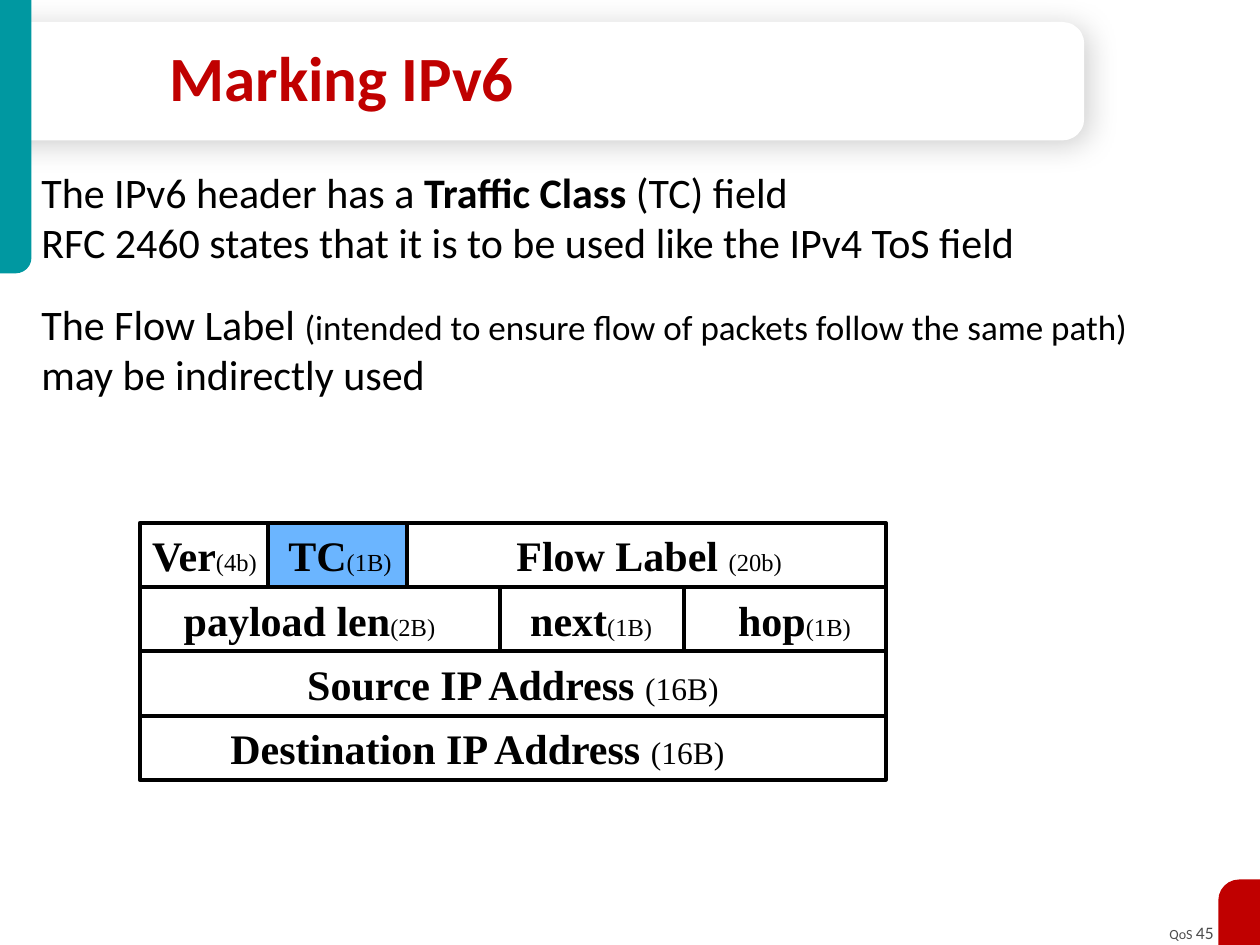
from lxml import etree
from pptx import Presentation
from pptx.dml.color import RGBColor
from pptx.enum.shapes import MSO_CONNECTOR, MSO_SHAPE
from pptx.enum.text import MSO_ANCHOR, PP_ALIGN
from pptx.oxml.ns import qn
from pptx.util import Inches, Pt

RECT = MSO_SHAPE.RECTANGLE
ONE_ROUND = MSO_SHAPE.ROUND_1_RECTANGLE
TWO_ROUND = MSO_SHAPE.ROUND_2_SAME_RECTANGLE
STRAIGHT = MSO_CONNECTOR.STRAIGHT
LEFT, RIGHT = PP_ALIGN.LEFT, PP_ALIGN.RIGHT
TOP, MIDDLE = MSO_ANCHOR.TOP, MSO_ANCHOR.MIDDLE
BODY_FONT, HEADER_FONT = "Calibri", "Times New Roman"

COLORS = {"paper": "FFFFFF", "teal": "0098A1", "red": "C00000",
          "ink": "000000", "gray": "4D4D4D", "highlight": "6BB5FF"}

TITLE = [[("Marking IPv6", 36, True)]]
FOOTER = [[("QoS ", 8, False), ("45", 10, False)]]
BODY = [
    [("The IPv6 header has a ", 24, False), ("Traffic Class", 24, True),
     (" (TC) field", 24, False)],
    [("RFC 2460 states that it is to be used like the IPv4 ToS field", 24, False)],
    [("The Flow Label ", 24, False),
     ("(intended to ensure flow of packets follow the same path)", 20, False),
     ("\vmay be indirectly used", 24, False)],
]

# Each field: name, size note, note point size, text offset within the row
HEADER_ROWS = [
    {"fields": [("Ver", "(4b)", 14, 0), ("TC", "(1B)", 14, 1.08),
                ("Flow Label ", "(20b)", 14, 2.89)], "dividers": [2.13, 3.23]},
    {"fields": [("payload len", "(2B)", 14, 0.25), ("next", "(1B)", 14, 3.0),
                ("hop", "(1B)", 14, 4.65)], "dividers": [3.97, 5.43]},
    {"fields": [("Source IP Address ", "(16B)", 18, 1.23)], "dividers": []},
    {"fields": [("Destination IP Address ", "(16B)", 18, 0.62)], "dividers": []},
]
ROW_LEFT, ROW_TOP, ROW_WIDTH, ROW_HEIGHT = 1.11, 4.15, 5.92, 0.51


def rgb(name):
    return RGBColor.from_string(COLORS[name])


def write(box, paragraphs, font=BODY_FONT, color="ink", align=LEFT, anchor=TOP,
          wrap=True, line_spacing=None, space_before=()):
    frame = box.text_frame
    frame.word_wrap = wrap
    frame.vertical_anchor = anchor
    for index, spans in enumerate(paragraphs):
        para = frame.paragraphs[0] if index == 0 else frame.add_paragraph()
        para.alignment = align
        para.line_spacing = line_spacing
        if index in space_before:
            para.space_before = Pt(18)
        for text, size, bold in spans:
            if text.startswith("\v"):
                para.add_line_break()
            span = para.add_run()
            span.text = text.lstrip("\v")
            span.font.name = font
            span.font.size = Pt(size)
            span.font.bold = bold
            span.font.color.rgb = rgb(color)


def add_text(page, area, paragraphs, **style):
    box = page.shapes.add_textbox(*map(Inches, area))
    write(box, paragraphs, **style)


def add_block(page, kind, area, fill=None, line=None, adjustments=(), flip=None):
    block = page.shapes.add_shape(kind, *map(Inches, area))
    block.shadow.inherit = False
    if fill:
        block.fill.solid()
        block.fill.fore_color.rgb = rgb(fill)
    else:
        block.fill.background()
    if line:
        block.line.color.rgb = rgb("ink")
        block.line.width = Pt(line)
    else:
        block.line.fill.background()
    for index, value in enumerate(adjustments):
        block.adjustments[index] = value
    if flip:
        block.element.spPr.find(qn("a:xfrm")).set(flip, "1")
    return block


def add_soft_shadow(block):
    effects = block.element.spPr.find(qn("a:effectLst"))
    shadow = etree.SubElement(effects, qn("a:outerShdw"), blurRad=str(Pt(17)),
                              dist=str(Pt(3)), dir=str(45 * 60000), rotWithShape="0")
    color = etree.SubElement(shadow, qn("a:srgbClr"), val=COLORS["ink"])
    etree.SubElement(color, qn("a:alpha"), val="19000")


def add_divider(page, x, top):
    divider = page.shapes.add_connector(STRAIGHT, Inches(x), Inches(top),
                                        Inches(x), Inches(top + ROW_HEIGHT))
    divider.line.color.rgb = rgb("ink")
    divider.line.width = Pt(2.25)
    etree.SubElement(divider.element.spPr, qn("a:effectLst"))


def add_header_row(page, top, fields, dividers):
    row = add_block(page, RECT, (ROW_LEFT, top, ROW_WIDTH, ROW_HEIGHT), line=2.25)
    spans, stops = [], []
    for name, note, note_size, offset in fields:
        if offset:
            stops.append(offset)
            name = "\t" + name
        spans += [(name, 24, True), (note, note_size, False)]
    write(row, [spans], font=HEADER_FONT, anchor=MIDDLE)
    properties = row.text_frame.paragraphs[0]._p.get_or_add_pPr()
    tabs = etree.SubElement(properties, qn("a:tabLst"))
    for offset in stops:
        etree.SubElement(tabs, qn("a:tab"), pos=str(Inches(offset)), algn="l")
    for x in dividers:
        add_divider(page, x, top)


def main():
    deck = Presentation()
    deck.slide_width, deck.slide_height = Inches(10), Inches(7.5)
    page = deck.slides.add_slide(deck.slide_layouts[6])

    add_text(page, (9.15, 7.27, 0.58, 0.27), FOOTER, color="gray", align=RIGHT, wrap=False)
    banner = add_block(page, TWO_ROUND, (3.83, -3.66, 0.94, 8.61), fill="paper",
                       adjustments=(0.184, 0))
    banner.rotation = 90
    add_soft_shadow(banner)
    add_block(page, ONE_ROUND, (0, 0, 0.25, 2.17), fill="teal",
              adjustments=(0.5,), flip="flipV")
    add_block(page, ONE_ROUND, (9.67, 6.98, 0.33, 0.52), fill="red",
              adjustments=(0.5,), flip="flipH")
    add_text(page, (1.25, 0.31, 7.26, 0.69), TITLE, color="red", anchor=MIDDLE,
             line_spacing=0.85)
    add_text(page, (0.23, 1.27, 9.36, 2.09), BODY, space_before=(2,))

    class_left, class_right = HEADER_ROWS[0]["dividers"]
    add_block(page, RECT, (class_left, ROW_TOP, class_right - class_left, ROW_HEIGHT),
              fill="highlight", line=0.75)
    for index, row in enumerate(HEADER_ROWS):
        add_header_row(page, ROW_TOP + index * ROW_HEIGHT, **row)

    deck.save("out.pptx")


if __name__ == "__main__":
    main()
